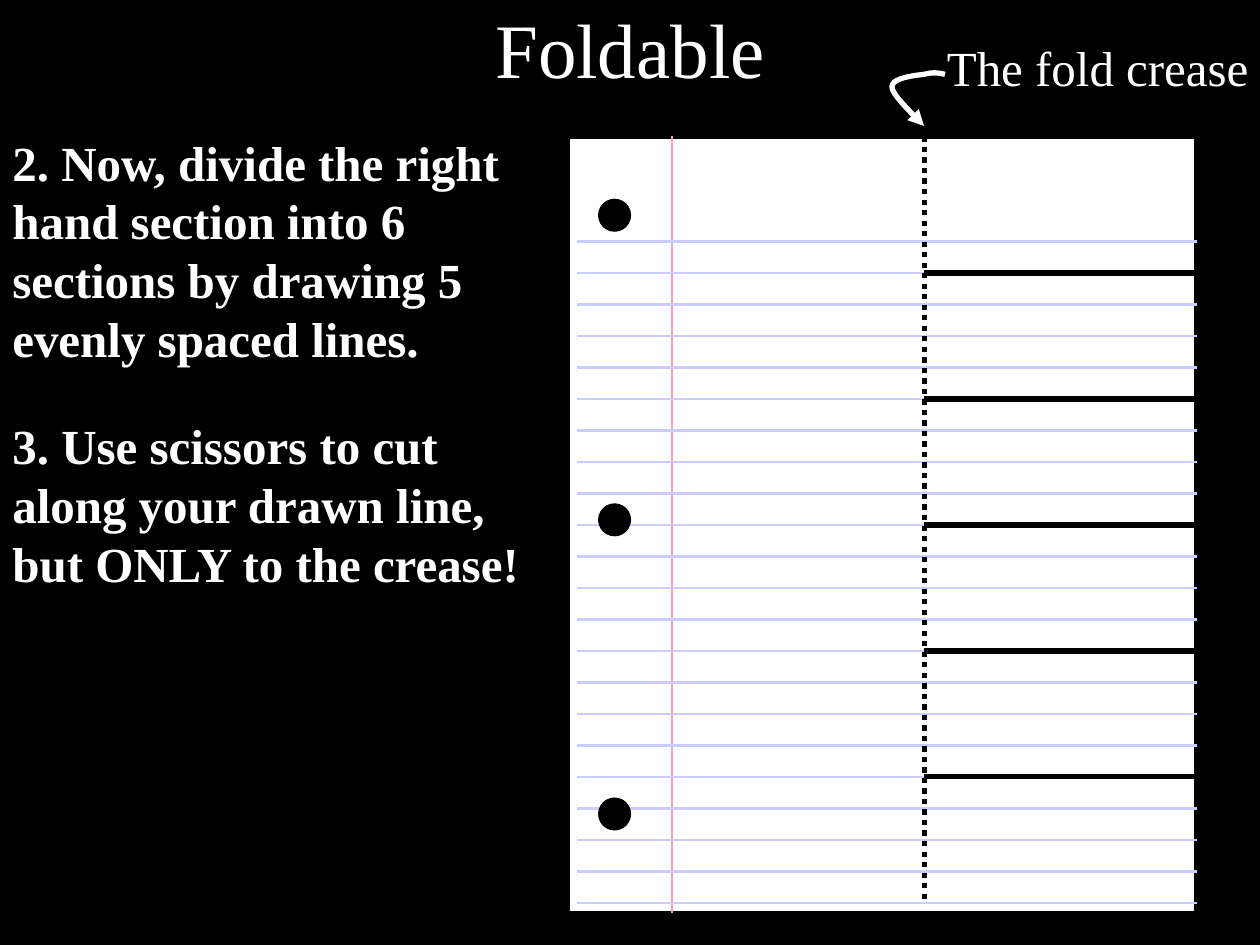
import pptx
import pptx.util
import pptx.dml.color
import pptx.enum.dml
import pptx.enum.shapes
import pptx.enum.text
import pptx.oxml
from dataclasses import dataclass
from pptx.util import Cm


@dataclass(frozen=True)
class Theme:
    font: str = "Times New Roman"
    title_size: int = 44
    text_size: int = 28
    black: str = "000000"
    white: str = "FFFFFF"
    margin_pink: str = "FF99CC"
    rule_blue: str = "CCCCFF"
    thin: float = 0.75
    ruled: float = 1.5
    bold: float = 3


theme = Theme()
rgb = pptx.dml.color.RGBColor.from_string
shape_kind = pptx.enum.shapes.MSO_SHAPE
fit = pptx.enum.text.MSO_AUTO_SIZE


def draw_line(shapes, start, end, color, width):
    line = shapes.add_connector(
        pptx.enum.shapes.MSO_CONNECTOR.STRAIGHT,
        Cm(start[0]), Cm(start[1]), Cm(end[0]), Cm(end[1]),
    )
    line.line.color.rgb = rgb(color)
    line.line.width = pptx.util.Pt(width)
    line._element.spPr.append(pptx.oxml.parse_xml(
        '<a:effectLst xmlns:a="http://schemas.openxmlformats.org/drawingml/2006/main"/>'
    ))
    return line


def write(holder, words, size, bold, align, autosize):
    frame = holder.text_frame
    frame.word_wrap = True
    frame.auto_size = autosize
    paragraph = frame.paragraphs[0]
    paragraph.alignment = align
    run = paragraph.add_run()
    run.text = words
    run.font.name = theme.font
    run.font.size = pptx.util.Pt(size)
    run.font.bold = bold
    run.font.color.rgb = rgb(theme.white)


deck = pptx.Presentation()
deck.slide_width, deck.slide_height = Cm(25.4), Cm(19.05)
slide = deck.slides.add_slide(deck.slide_layouts[5])
slide.background.fill.solid()
slide.background.fill.fore_color.rgb = rgb(theme.black)

title = slide.shapes.title
title.left, title.top, title.width, title.height = Cm(1.91), Cm(0), Cm(21.59), Cm(1.91)
title.text_frame.vertical_anchor = pptx.enum.text.MSO_ANCHOR.MIDDLE
write(title, "Foldable", theme.title_size, False, pptx.enum.text.PP_ALIGN.CENTER, fit.NONE)

paper_left, paper_top, paper_right, paper_bottom = 11.43, 2.75, 24.13, 18.41
margin_x, crease_x = 13.55, 18.63
rule_left, first_rule, last_rule, rule_count = 11.64, 4.87, 18.2, 22
rule_gap = (last_rule - first_rule) / (rule_count - 1)
rule_heights = [first_rule + i * rule_gap for i in range(rule_count)]
hole_left, hole_size = 12.07, 0.64

paper = slide.shapes.add_group_shape().shapes
sheet = paper.add_shape(
    shape_kind.RECTANGLE, Cm(paper_left), Cm(paper_top),
    Cm(paper_right - paper_left), Cm(paper_bottom - paper_top),
)
sheet.shadow.inherit = False
sheet.fill.solid()
sheet.fill.fore_color.rgb = rgb(theme.white)
sheet.line.color.rgb = rgb(theme.black)
sheet.line.width = pptx.util.Pt(theme.bold)

draw_line(paper, (margin_x, paper_top), (margin_x, paper_bottom), theme.margin_pink, theme.ruled)
for y in rule_heights:
    draw_line(paper, (rule_left, y), (paper_right, y), theme.rule_blue, theme.ruled)

for hole_top in (4.02, 10.16, 16.09):
    hole = paper.add_shape(
        shape_kind.OVAL, Cm(hole_left), Cm(hole_top), Cm(hole_size), Cm(hole_size)
    )
    hole.shadow.inherit = False
    hole.fill.solid()
    hole.fill.fore_color.rgb = rgb(theme.black)
    hole.line.color.rgb = rgb(theme.black)
    hole.line.width = pptx.util.Pt(theme.thin)

crease = draw_line(
    slide.shapes, (crease_x, paper_top), (crease_x, last_rule), theme.black, theme.bold
)
crease.line.dash_style = pptx.enum.dml.MSO_LINE.ROUND_DOT

for y in rule_heights[1:18:4]:
    draw_line(slide.shapes, (paper_right, y), (crease_x, y), theme.black, theme.bold)

for words, bold, left, top, width, height in (
    ("2. Now, divide the right hand section into 6 sections by drawing 5 evenly spaced lines.",
     True, 0, 2.54, 10.58, 5),
    ("3. Use scissors to cut along your drawn line, but ONLY to the crease!",
     True, 0, 8.26, 11, 3.81),
    ("The fold crease", False, 18.84, 0.64, 6.77, 1.44),
):
    note = slide.shapes.add_textbox(Cm(left), Cm(top), Cm(width), Cm(height))
    write(note, words, theme.text_size, bold, pptx.enum.text.PP_ALIGN.LEFT, fit.SHAPE_TO_FIT_TEXT)

bends = (
    ((19.05, 1.5), (18.92, 1.47), (18.8, 1.45), (18.63, 1.5)),
    ((18.63, 1.5), (18.44, 1.52), (17.98, 1.57), (17.98, 1.75)),
    ((17.98, 1.75), (17.98, 1.93), (18.52, 2.41), (18.63, 2.54)),
)
steps = 10
curve = []
for bend in bends:
    for step in range(1, steps + 1):
        t = step / steps
        weights = ((1 - t) ** 3, 3 * t * (1 - t) ** 2, 3 * t ** 2 * (1 - t), t ** 3)
        curve.append(tuple(
            Cm(sum(w * point[axis] for w, point in zip(weights, bend))) for axis in (0, 1)
        ))
pointer_path = slide.shapes.build_freeform(Cm(bends[0][0][0]), Cm(bends[0][0][1]))
pointer_path.add_line_segments(curve, close=False)
pointer = pointer_path.convert_to_shape()
pointer.shadow.inherit = False
pointer.fill.background()
pointer.line.color.rgb = rgb(theme.white)
pointer.line.width = pptx.util.Pt(theme.bold)
pointer.line._get_or_add_ln().append(pptx.oxml.parse_xml(
    '<a:tailEnd xmlns:a="http://schemas.openxmlformats.org/drawingml/2006/main" type="triangle"/>'
))

deck.save("out.pptx")
